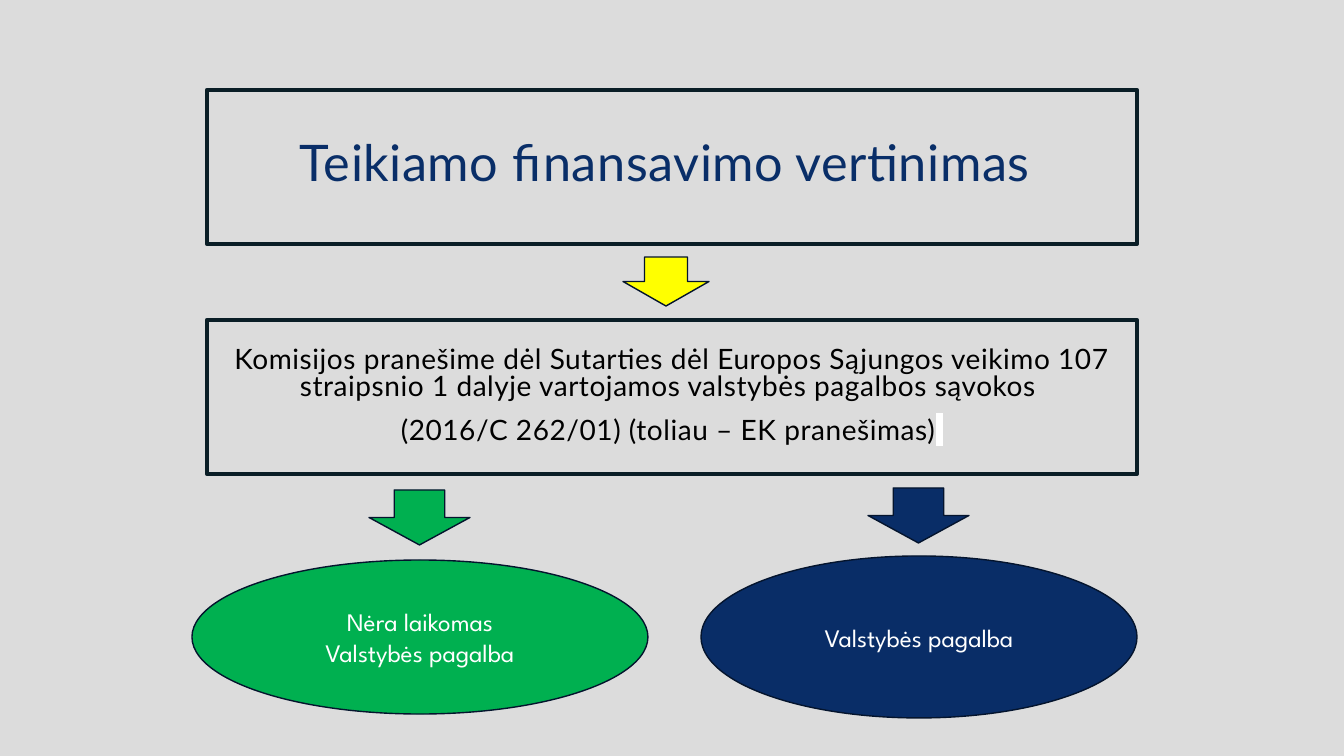
import collections

import lxml.etree
import pptx
import pptx.dml.color
import pptx.enum.shapes
import pptx.enum.text
import pptx.oxml.ns
import pptx.util

PX = 914400 / 100.8
SHAPES = pptx.enum.shapes.MSO_SHAPE
Box = collections.namedtuple("Box", "left top width height")


class Theme:
    """Colours, fonts and sizes of the slide."""
    background = "DCDCDC"
    frame = "0A1E26"
    outline = "04142D"
    title = "092E68"
    body = "000000"
    white = "FFFFFF"
    navy = "092D67"
    green = "00B050"
    yellow = "FFFF00"
    frame_font = "Lato"
    outcome_font = "League Spartan"
    title_size = 36
    body_size = 20
    outcome_size = 18
    frame_line = 3
    outline_width = 1


def px(length):
    """Turn pixels into EMU."""
    return pptx.util.Emu(round(length * PX))


def rgb(colour):
    """Turn a hex string into a colour."""
    return pptx.dml.color.RGBColor.from_string(colour)


def add_shape(page, kind, box, fill, line, width):
    """Add a flat shape with the given fill and outline."""
    shape = page.shapes.add_shape(kind, *map(px, box))
    shape.shadow.inherit = False
    if fill:
        shape.fill.solid()
        shape.fill.fore_color.rgb = rgb(fill)
    else:
        shape.fill.background()
    shape.line.color.rgb = rgb(line)
    shape.line.width = pptx.util.Pt(width)
    return shape


def write(shape, lines, font, size, colour):
    """Write centred paragraphs into a shape and return them."""
    frame = shape.text_frame
    frame.word_wrap = True
    frame.vertical_anchor = pptx.enum.text.MSO_ANCHOR.MIDDLE
    frame.text = "\n".join(lines)
    for para in frame.paragraphs:
        para.alignment = pptx.enum.text.PP_ALIGN.CENTER
        para.font.name = font
        para.font.size = pptx.util.Pt(size)
        para.font.color.rgb = rgb(colour)
    return frame.paragraphs


def add_frame(page, box, lines, size, colour):
    """Add an outlined rectangle with tight, slightly tracked text."""
    shape = add_shape(page, SHAPES.RECTANGLE, box, None, Theme.frame, Theme.frame_line)
    paras = write(shape, lines, Theme.frame_font, size, colour)
    for para in paras:
        para.line_spacing = 0.8
        para.space_after = pptx.util.Pt(12)
        para._p.pPr.get_or_add_defRPr().set("spc", "40")
    return paras


def add_highlighted_space(para):
    """End a paragraph with a space on a white highlight."""
    span = para.add_run()
    span.text = " "
    name = pptx.oxml.ns.qn
    highlight = lxml.etree.SubElement(span._r.get_or_add_rPr(), name("a:highlight"))
    lxml.etree.SubElement(highlight, name("a:srgbClr")).set("val", Theme.white)


def add_arrow(page, box, fill):
    """Add a down arrow."""
    add_shape(page, SHAPES.DOWN_ARROW, box, fill, Theme.outline, Theme.outline_width)


def add_outcome(page, box, lines, fill, arrow_rise):
    """Add an outcome ellipse with an arrow centred above it."""
    width, height = 101, 55
    left = box.left + (box.width - width) // 2
    add_arrow(page, Box(left, box.top - arrow_rise, width, height), fill)
    ellipse = add_shape(page, SHAPES.OVAL, box, fill, Theme.outline, Theme.outline_width)
    write(ellipse, lines, Theme.outcome_font, Theme.outcome_size, Theme.white)


def build_assessment(page):
    """Place the title, the legal basis and the two outcomes."""
    page.background.fill.solid()
    page.background.fill.fore_color.rgb = rgb(Theme.background)
    title_box = Box(207, 90, 930, 154)
    basis_box = title_box._replace(top=320)
    add_frame(page, title_box, ["Teikiamo finansavimo vertinimas "],
              Theme.title_size, Theme.title)
    add_arrow(page, Box(623, 257, 86, 49), Theme.yellow)
    basis = add_frame(page, basis_box, [
        "Komisijos pranešime dėl Sutarties dėl Europos Sąjungos veikimo "
        "107 straipsnio 1 dalyje vartojamos valstybės pagalbos sąvokos ",
        "(2016/C 262/01) (toliau – EK pranešimas)",
    ], Theme.body_size, Theme.body)
    add_highlighted_space(basis[-1])
    add_outcome(page, Box(192, 560, 456, 154),
                ["Nėra laikomas", "Valstybės pagalba"], Theme.green, 70)
    add_outcome(page, Box(701, 556, 436, 162),
                ["Valstybės pagalba"], Theme.navy, 68)


def main():
    """Build and save the deck."""
    deck = pptx.Presentation()
    deck.slide_width, deck.slide_height = px(1344), px(756)
    build_assessment(deck.slides.add_slide(deck.slide_layouts[6]))
    deck.save("out.pptx")


if __name__ == "__main__":
    main()
